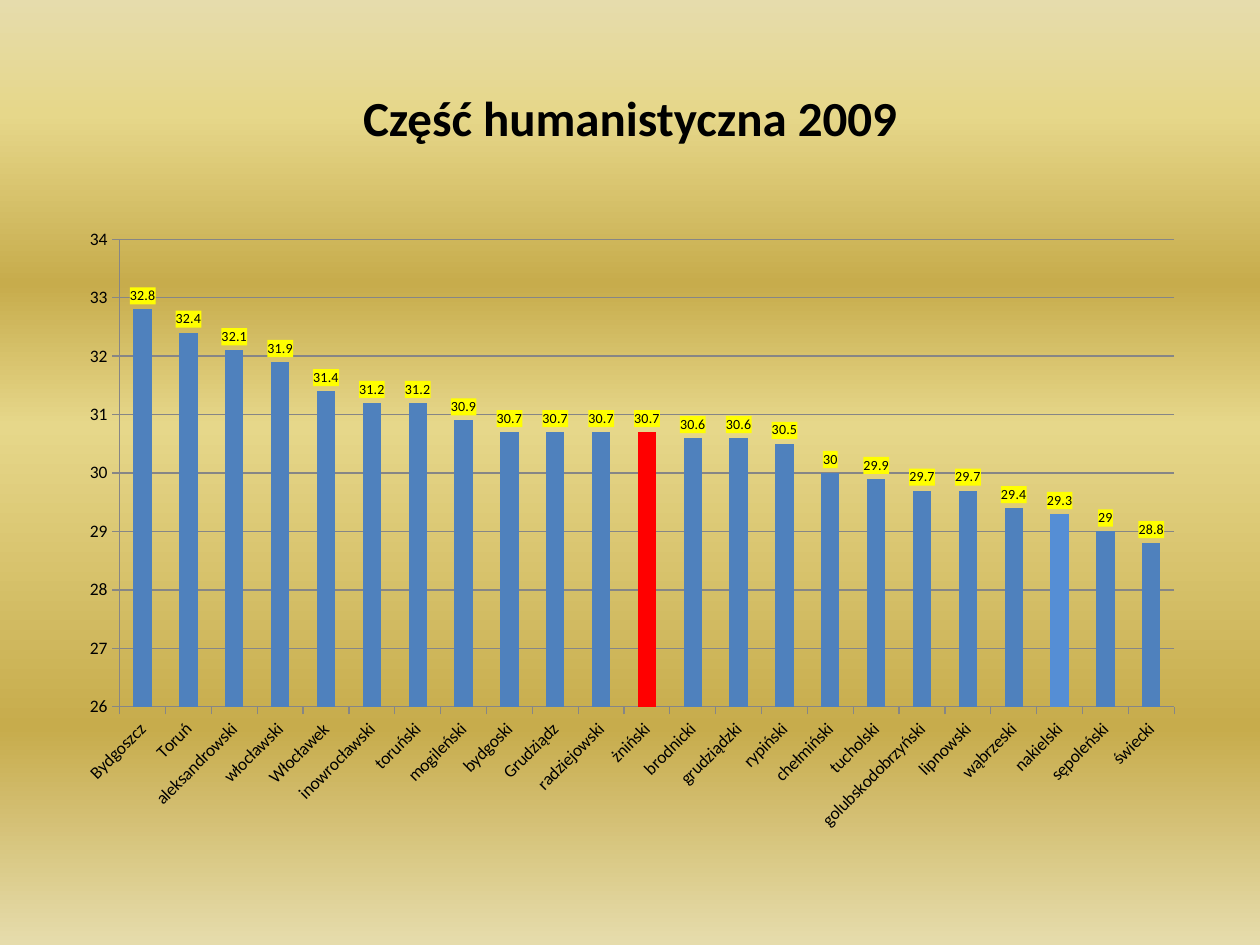
from dataclasses import dataclass
from typing import NamedTuple

from lxml.etree import SubElement
from pptx import Presentation
from pptx.chart.data import CategoryChartData
from pptx.dml.color import RGBColor
from pptx.enum.chart import XL_CHART_TYPE, XL_LABEL_POSITION, XL_TICK_MARK
from pptx.enum.text import MSO_ANCHOR, PP_ALIGN
from pptx.oxml import parse_xml
from pptx.oxml.ns import nsdecls, qn
from pptx.util import Inches, Pt


@dataclass(frozen=True)
class Theme:
    font: str = "Calibri"
    text: str = "000000"
    bar: str = "4F81BD"
    grid: str = "868686"
    label: str = "FFFF00"
    title_size: int = 28
    axis_size: int = 10
    label_size: int = 8
    background: tuple = (
        (0, "E6DCAC"), (12, "E6D78A"), (30, "C7AC4C"),
        (45, "E6D78A"), (77, "C7AC4C"), (100, "E6DCAC"),
    )


class County(NamedTuple):
    name: str
    score: float
    color: str = ""


THEME = Theme()
COUNTIES = [
    County("Bydgoszcz", 32.8),
    County("Toruń", 32.4),
    County("aleksandrowski", 32.1),
    County("włocławski", 31.9),
    County("Włocławek", 31.4),
    County("inowrocławski", 31.2),
    County("toruński", 31.2),
    County("mogileński", 30.9),
    County("bydgoski", 30.7),
    County("Grudziądz", 30.7),
    County("radziejowski", 30.7),
    County("żniński", 30.7, "FF0000"),
    County("brodnicki", 30.6),
    County("grudziądzki", 30.6),
    County("rypiński", 30.5),
    County("chełmiński", 30),
    County("tucholski", 29.9),
    County("golubskodobrzyński", 29.7),
    County("lipnowski", 29.7),
    County("wąbrzeski", 29.4),
    County("nakielski", 29.3, "558ED5"),
    County("sępoleński", 29),
    County("świecki", 28.8),
]


def apply(target, formats: dict) -> None:
    for name, value in formats.items():
        setattr(target, name, value)


def set_font(font, size: int, bold: bool = False) -> None:
    apply(font, {"name": THEME.font, "size": Pt(size), "bold": bold})
    font.color.rgb = RGBColor.from_string(THEME.text)


def set_fill(fmt, color: str) -> None:
    fmt.fill.solid()
    fmt.fill.fore_color.rgb = RGBColor.from_string(color)


def set_line(line) -> None:
    line.color.rgb = RGBColor.from_string(THEME.grid)
    line.width = Pt(0.75)


def set_background(s) -> None:
    fill = s.background.fill
    fill.gradient()
    fill.gradient_angle = 270
    stops = s.element.xpath(".//p:bg//a:gsLst")[0]
    for stop in list(stops):
        stops.remove(stop)
    for percent, color in THEME.background:
        stop = SubElement(stops, qn("a:gs"), pos=str(percent * 1000))
        SubElement(stop, qn("a:srgbClr"), val=color)


def add_title(s, text: str) -> None:
    sp = s.shapes.title
    apply(sp, {"left": Inches(0.5), "top": Inches(0.3),
               "width": Inches(9), "height": Inches(1.25)})
    tf = sp.text_frame
    tf.vertical_anchor = MSO_ANCHOR.MIDDLE
    p = tf.paragraphs[0]
    p.alignment = PP_ALIGN.CENTER
    r = p.add_run()
    r.text = text
    set_font(r.font, THEME.title_size, True)


def set_plot_layout(chart, x: float, y: float, w: float, h: float) -> None:
    area = chart.element.xpath(".//c:plotArea")[0]
    for old in area.findall(qn("c:layout")):
        area.remove(old)
    layout = parse_xml(f"<c:layout {nsdecls('c')}><c:manualLayout/></c:layout>")
    values = {"layoutTarget": "inner", "xMode": "edge", "yMode": "edge",
              "x": x, "y": y, "w": w, "h": h}
    for name, value in values.items():
        SubElement(layout[0], qn(f"c:{name}"), val=str(value))
    area.insert(0, layout)


def style_axes(chart) -> None:
    for axis in (chart.category_axis, chart.value_axis):
        apply(axis, {"major_tick_mark": XL_TICK_MARK.OUTSIDE,
                     "minor_tick_mark": XL_TICK_MARK.NONE})
        set_font(axis.tick_labels.font, THEME.axis_size)
        set_line(axis.format.line)
    names = chart.category_axis
    names._element.find(qn("c:txPr")).find(qn("a:bodyPr")).set("rot", "-2700000")
    scale = chart.value_axis
    apply(scale, {"minimum_scale": 26, "maximum_scale": 34,
                  "major_unit": 1, "has_major_gridlines": True})
    set_line(scale.major_gridlines.format.line)


def style_labels(plot) -> None:
    plot.has_data_labels = True
    labels = plot.data_labels
    apply(labels, {"show_value": True, "position": XL_LABEL_POSITION.OUTSIDE_END})
    set_font(labels.font, THEME.label_size)
    box = parse_xml(
        f"<c:spPr {nsdecls('c', 'a')}><a:solidFill>"
        f'<a:srgbClr val="{THEME.label}"/></a:solidFill></c:spPr>'
    )
    labels._element.find(qn("c:txPr")).addprevious(box)


def add_scores(s, counties: list[County]) -> None:
    data = CategoryChartData()
    data.categories = [county.name for county in counties]
    data.add_series("Series 1", [county.score for county in counties])
    chart = s.shapes.add_chart(
        XL_CHART_TYPE.COLUMN_CLUSTERED,
        Inches(0.5), Inches(1.75), Inches(9), Inches(4.95), data,
    ).chart
    apply(chart, {"has_title": False, "has_legend": False})
    set_font(chart.font, THEME.axis_size)
    set_plot_layout(chart, 0.05, 0.03, 0.93, 0.75)
    style_axes(chart)
    plot = chart.plots[0]
    apply(plot, {"gap_width": 150, "vary_by_categories": False})
    style_labels(plot)
    series = plot.series[0]
    set_fill(series.format, THEME.bar)
    for i, county in enumerate(counties):
        if county.color:
            set_fill(series.points[i].format, county.color)


def main() -> None:
    prs = Presentation()
    apply(prs, {"slide_width": Inches(10), "slide_height": Inches(7.5)})
    s = prs.slides.add_slide(prs.slide_layouts[5])
    set_background(s)
    add_title(s, "Część humanistyczna 2009")
    add_scores(s, COUNTIES)
    prs.save("out.pptx")


if __name__ == "__main__":
    main()
